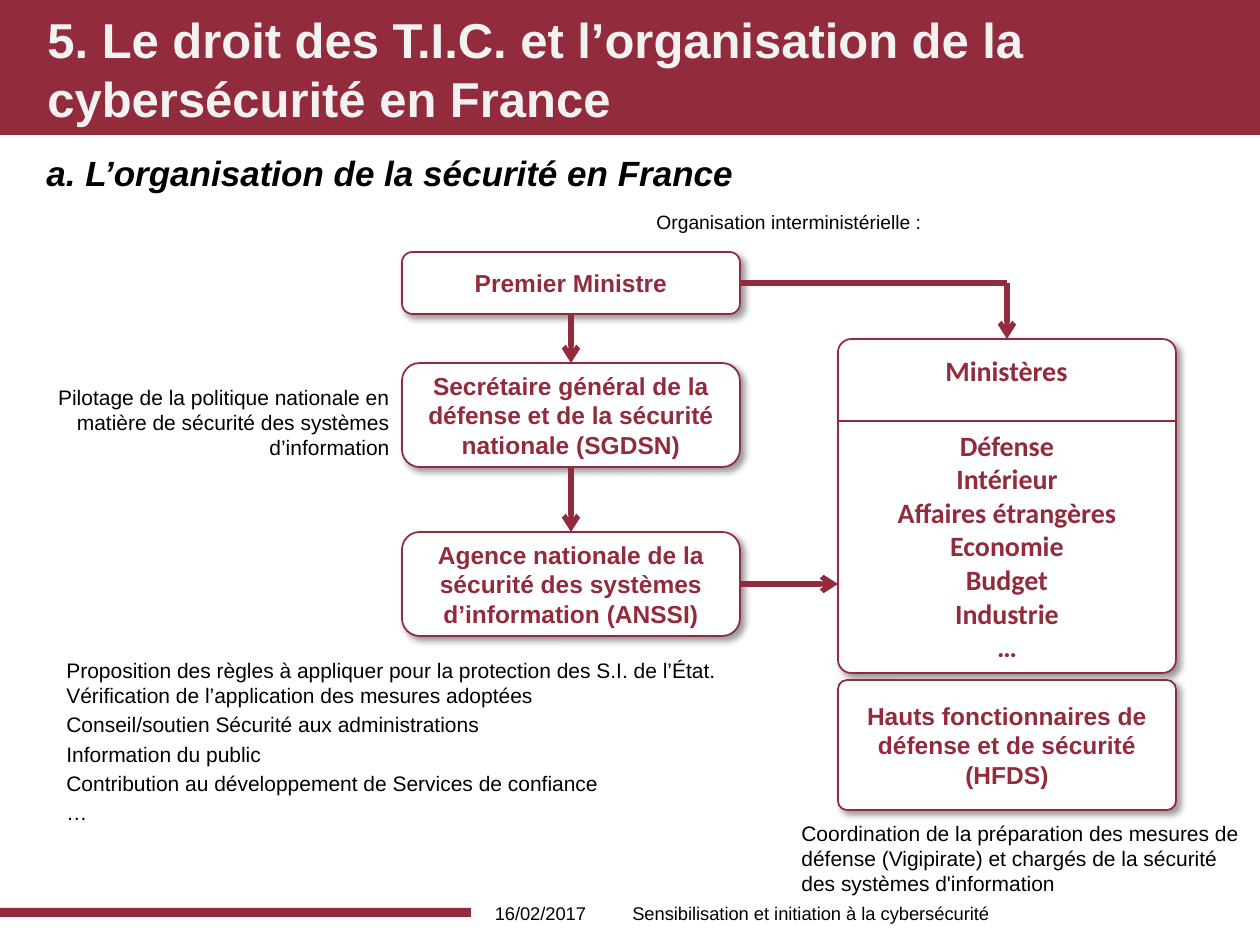
import pptx
import pptx.dml.color
import pptx.enum.shapes
import pptx.enum.text
import pptx.oxml
import pptx.oxml.ns
import pptx.util

SHAPE = pptx.enum.shapes.MSO_SHAPE
ALIGN = pptx.enum.text.PP_ALIGN
ANCHOR = pptx.enum.text.MSO_ANCHOR
TOP, LEFT, BOTTOM, RIGHT = range(4)
RED = "922B3C"
NS = pptx.oxml.ns.nsdecls("a")


def px(length):
    return pptx.util.Emu(round(length * 914400 / 126))


def color(value):
    return pptx.dml.color.RGBColor.from_string(value)


def write(frame, text, size=12, font="Arial", ink="000000", bold=False, italic=False,
          align=ALIGN.LEFT, anchor=ANCHOR.TOP, wrap=True, gap=0):
    """Fill a text frame, one paragraph for each line of text."""
    frame.word_wrap = wrap
    frame.vertical_anchor = anchor
    for index, line in enumerate(text.split("\n")):
        para = frame.add_paragraph() if index else frame.paragraphs[0]
        para.alignment = align
        para.space_before = pptx.util.Pt(gap if index else 0)
        span = para.add_run()
        span.text = line
        span.font.size = pptx.util.Pt(size)
        span.font.name = font
        span.font.bold = bold
        span.font.italic = italic
        span.font.color.rgb = color(ink)


def add_text(page, place, text, **style):
    box = page.shapes.add_textbox(*map(px, place))
    write(box.text_frame, text, **style)


def add_band(page, *place):
    band = page.shapes.add_shape(SHAPE.RECTANGLE, *map(px, place))
    band.shadow.inherit = False
    band.fill.solid()
    band.fill.fore_color.rgb = color(RED)
    band.line.fill.background()


def add_card(page, place, text="", corner=0.17):
    """Add a rounded white box with a red outline and a soft shadow."""
    card = page.shapes.add_shape(SHAPE.ROUNDED_RECTANGLE, *map(px, place))
    card.adjustments[0] = corner
    card.fill.solid()
    card.fill.fore_color.rgb = color("FFFFFF")
    card.line.color.rgb = color(RED)
    card.line.width = pptx.util.Pt(1)
    card._element.spPr.append(pptx.oxml.parse_xml(
        f'<a:effectLst {NS}><a:outerShdw blurRad="50800" dist="38100" dir="2700000" '
        'algn="tl" rotWithShape="0"><a:srgbClr val="000000"><a:alpha val="40000"/>'
        '</a:srgbClr></a:outerShdw></a:effectLst>'))
    if text:
        write(card.text_frame, text, size=14, ink=RED, bold=True,
              align=ALIGN.CENTER, anchor=ANCHOR.MIDDLE)
    return card


def add_line(page, start, end, width=3, arrow=True, begin=None, finish=None):
    """Draw a line; begin and finish are (shape, side) pairs to join."""
    line = page.shapes.add_connector(
        pptx.enum.shapes.MSO_CONNECTOR.STRAIGHT, *map(px, start + end))
    line.line.color.rgb = color(RED)
    line.line.width = pptx.util.Pt(width)
    if arrow:
        line.line._get_or_add_ln().append(
            pptx.oxml.parse_xml(f'<a:tailEnd {NS} type="arrow"/>'))
    line._element.spPr.append(pptx.oxml.parse_xml(f"<a:effectLst {NS}/>"))
    if begin:
        line.begin_connect(*begin)
    if finish:
        line.end_connect(*finish)


def add_frame(page):
    add_band(page, 0, 0, 1260, 135)
    add_band(page, 0, 908, 471, 9)
    add_text(page, (35, 1, 1201, 134),
             "5. Le droit des T.I.C. et l’organisation de la cybersécurité en France",
             size=28, ink="F2F2F2", bold=True, anchor=ANCHOR.MIDDLE)
    add_text(page, (34, 145, 1201, 79), "a. L’organisation de la sécurité en France",
             size=20, bold=True, italic=True)
    add_text(page, (471, 888, 139, 50), "16/02/2017", size=10.5,
             align=ALIGN.CENTER, anchor=ANCHOR.MIDDLE)
    add_text(page, (620, 888, 418, 50), "Sensibilisation et initiation à la cybersécurité",
             size=10.5, anchor=ANCHOR.MIDDLE)


def add_chart_of_bodies(page):
    chain_left, ministry_left, width = 402, 838, 338
    chain_middle, ministry_middle = chain_left + width // 2, ministry_left + width // 2
    premier = add_card(page, (chain_left, 252, width, 62), "Premier Ministre")
    secretary = add_card(page, (chain_left, 363, width, 104),
                         "Secrétaire général de la défense et de la sécurité nationale (SGDSN)")
    agency = add_card(page, (chain_left, 532, width, 104),
                      "Agence nationale de la sécurité des systèmes d’information (ANSSI)")
    ministries = add_card(page, (ministry_left, 339, width, 334), corner=0.04)
    heading = dict(size=16, font="Calibri", ink=RED, bold=True, align=ALIGN.CENTER)
    add_text(page, (932, 347, 149, 47), "Ministères", wrap=False, **heading)
    add_text(page, (ministry_left, 422, width, 251),
             "Défense\nIntérieur\nAffaires étrangères\nEconomie\nBudget\nIndustrie\n…",
             **heading)
    add_line(page, (ministry_left, 421), (ministry_left + width, 421), width=0.75, arrow=False)
    add_card(page, (ministry_left, 680, width, 130),
             "Hauts fonctionnaires de défense et de sécurité (HFDS)", corner=0.07)

    chain_right = chain_left + width
    add_line(page, (chain_right, 283), (ministry_middle, 283), arrow=False,
             begin=(premier, RIGHT))
    add_line(page, (ministry_middle, 283), (ministry_middle, 339), finish=(ministries, TOP))
    add_line(page, (chain_middle, 314), (chain_middle, 363),
             begin=(premier, BOTTOM), finish=(secretary, TOP))
    add_line(page, (chain_middle, 467), (chain_middle, 532),
             begin=(secretary, BOTTOM), finish=(agency, TOP))
    add_line(page, (chain_right, 584), (ministry_left, 584), begin=(agency, RIGHT))


def add_notes_on_roles(page):
    add_text(page, (583, 204, 412, 37), "Organisation interministérielle :",
             size=11, align=ALIGN.CENTER)
    add_text(page, (20, 378, 382, 89), "Pilotage de la politique nationale en matière "
             "de sécurité des systèmes d’information", align=ALIGN.RIGHT)
    add_text(page, (54, 651, 679, 189),
             "Proposition des règles à appliquer pour la protection des S.I. de l’État. "
             "Vérification de l’application des mesures adoptées\n"
             "Conseil/soutien Sécurité aux administrations\n"
             "Information du public\n"
             "Contribution au développement de Services de confiance\n…", gap=2.4)
    add_text(page, (789, 814, 472, 89),
             "Coordination de la préparation des mesures de défense (Vigipirate) et "
             "chargés de la sécurité des systèmes d'information")


def main():
    deck = pptx.Presentation()
    deck.slide_width, deck.slide_height = px(1260), px(945)
    page = deck.slides.add_slide(deck.slide_layouts[6])
    add_frame(page)
    add_chart_of_bodies(page)
    add_notes_on_roles(page)
    deck.save("out.pptx")


if __name__ == "__main__":
    main()
